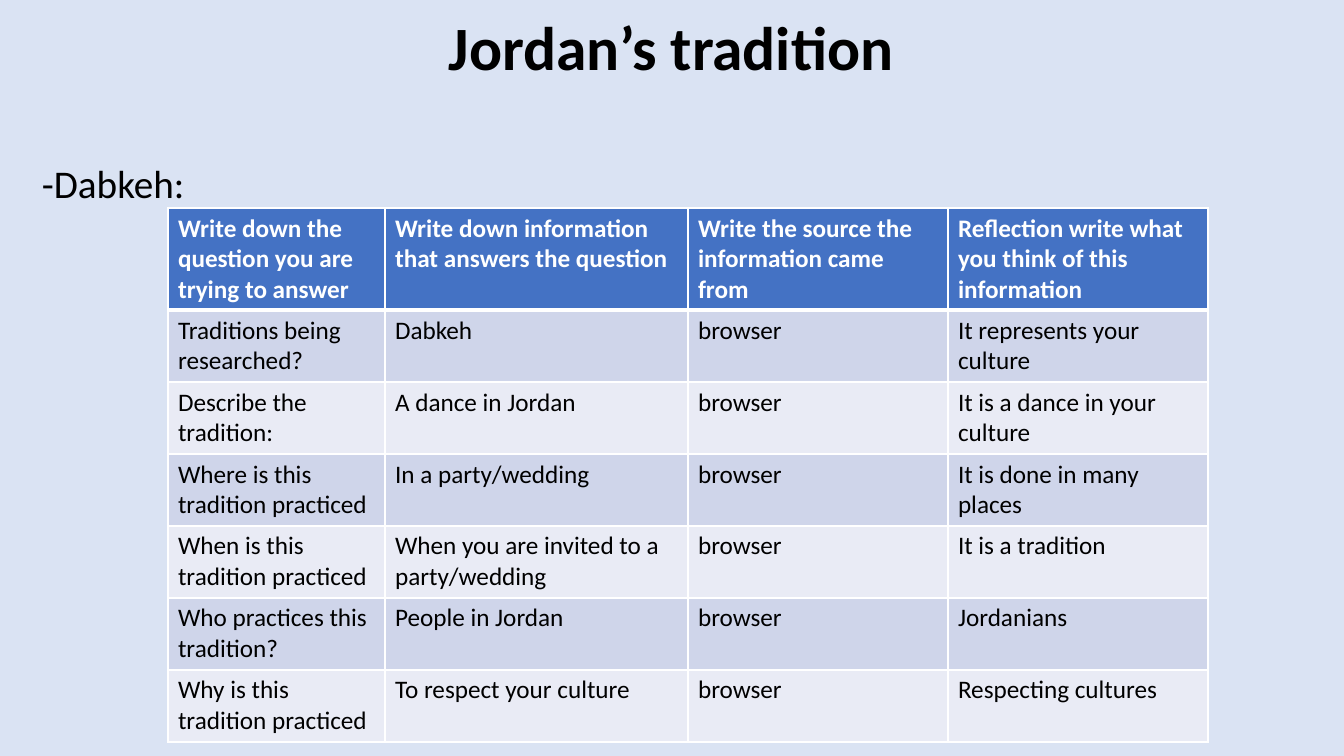
"""Build the slide on Jordan's tradition with its research table."""
from lxml import etree
from pptx import Presentation
from pptx.dml.color import RGBColor
from pptx.enum.text import MSO_ANCHOR, PP_ALIGN
from pptx.oxml.ns import qn
from pptx.util import Pt

PX = 914400 / 100.8
MIDDLE = MSO_ANCHOR.MIDDLE
CENTER = PP_ALIGN.CENTER
COLS = [217, 303, 260, 260]
HEAD, ROW = 102, 72
SOURCE = "browser"
ROWS = [
    ("Write down the question you are trying to answer",
     "Write down information that answers the question",
     "Write the source the information came from",
     "Reflection write what you think of this information"),
    ("Traditions being researched?", "Dabkeh", SOURCE,
     "It represents your culture"),
    ("Describe the tradition:", "A dance in Jordan", SOURCE,
     "It is a dance in your culture"),
    ("Where is this tradition practiced", "In a party/wedding", SOURCE,
     "It is done in many places"),
    ("When is this tradition practiced",
     "When you are invited to a party/wedding", SOURCE,
     "It is a tradition"),
    ("Who practices this tradition?", "People in Jordan", SOURCE,
     "Jordanians"),
    ("Why is this tradition practiced", "To respect your culture", SOURCE,
     "Respecting cultures"),
]


def paint(target, color):
    target.solid()
    target.fore_color.rgb = RGBColor.from_string(color)


def style(para, size, color="000000", bold=False):
    font = para.font
    font.name, font.size, font.bold = "Calibri", Pt(size), bold
    paint(font.fill, color)


deck = Presentation()
deck.slide_width, deck.slide_height = round(1344 * PX), round(756 * PX)
slide = deck.slides.add_slide(deck.slide_layouts[5])
paint(slide.background.fill, "DAE3F3")

title = slide.shapes.title
title.left, title.top, title.width, title.height = [
    round(n * PX) for n in (92, 3, 1159, 95)]
title.text_frame.vertical_anchor = MIDDLE
title.text_frame.text = "Jordan’s tradition"
para = title.text_frame.paragraphs[0]
para.alignment = CENTER
para.line_spacing = 0.9
style(para, 44, bold=True)

box = slide.shapes.add_textbox(*[round(n * PX) for n in (32, 160, 1220, 48)])
box.text_frame.word_wrap = True
box.text_frame.text = "-Dabkeh:"
para = box.text_frame.paragraphs[0]
para.line_spacing = 0.9
style(para, 28)

high = HEAD + ROW * (len(ROWS) - 1)
place = [round(n * PX) for n in (168, 208, sum(COLS), high)]
table = slide.shapes.add_table(len(ROWS), len(COLS), *place).table
for col, width in zip(table.columns, COLS):
    col.width = round(width * PX)
for r, texts in enumerate(ROWS):
    table.rows[r].height = round((ROW if r else HEAD) * PX)
    for c, text in enumerate(texts):
        cell = table.cell(r, c)
        cell.text = text
        style(cell.text_frame.paragraphs[0], 18,
              "000000" if r else "FFFFFF", r == 0)
        props = cell._tc.get_or_add_tcPr()
        for side in ("lnL", "lnR", "lnT", "lnB"):
            thick = (r, side) in ((0, "lnB"), (1, "lnT"))
            line = etree.SubElement(props, qn("a:" + side),
                                    w=str(Pt(3 if thick else 1)))
            fill = etree.SubElement(line, qn("a:solidFill"))
            etree.SubElement(fill, qn("a:srgbClr"), val="FFFFFF")
        band = "CFD5EA" if r % 2 else "E9EBF5"
        paint(cell.fill, band if r else "4472C4")

deck.save("out.pptx")
